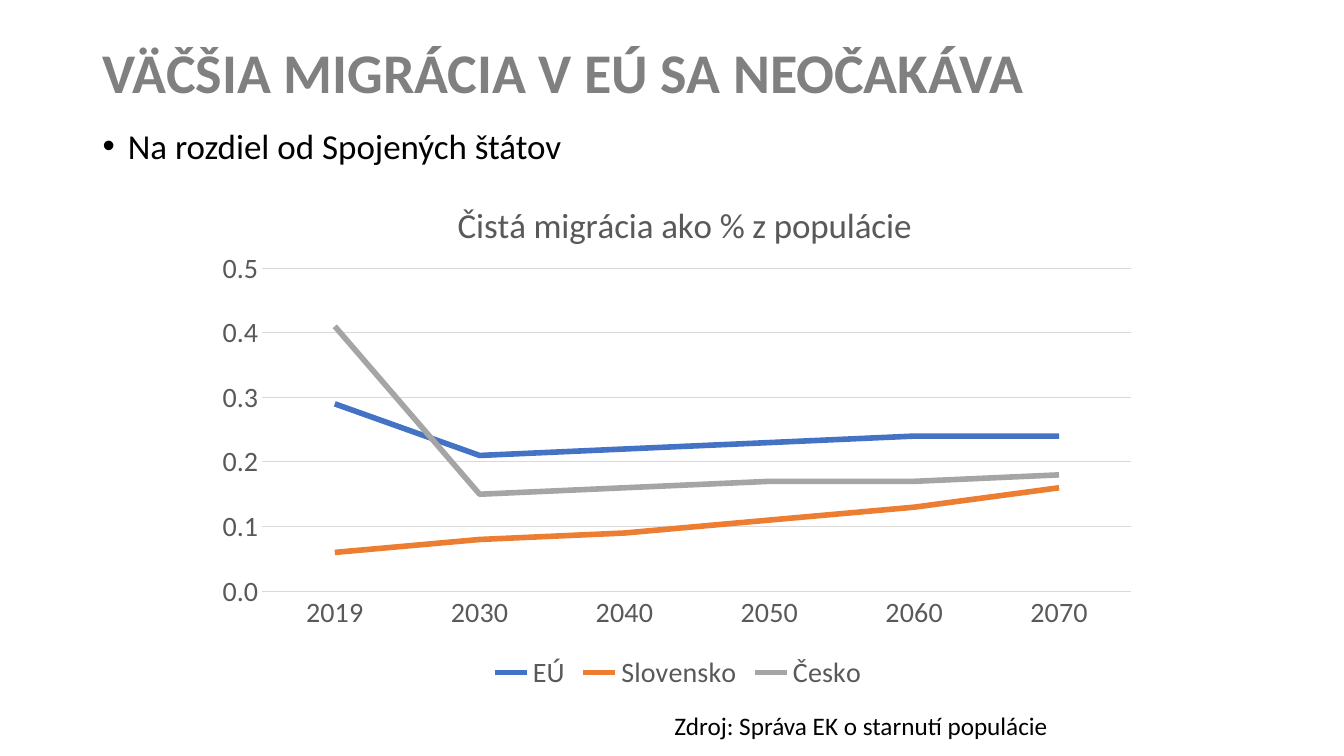
from dataclasses import dataclass

from lxml.etree import SubElement
from pptx import Presentation
from pptx.chart.data import CategoryChartData
from pptx.dml.color import RGBColor
from pptx.enum.chart import XL_CHART_TYPE, XL_LEGEND_POSITION, XL_TICK_MARK
from pptx.enum.text import MSO_ANCHOR, PP_ALIGN
from pptx.oxml.ns import qn
from pptx.util import Inches, Pt


@dataclass(frozen=True)
class Theme:
    face: str = "Calibri"
    heading: str = "808080"
    ink: str = "000000"
    label: str = "595959"
    rule: str = "D9D9D9"
    heading_size: int = 40
    body_size: int = 25
    label_size: int = 20
    source_size: int = 18
    rule_width: float = 0.75
    series_width: int = 4


THEME = Theme()
YEARS = ("2019", "2030", "2040", "2050", "2060", "2070")
# Region: (line colour, net migration as a share of population)
MIGRATION = {
    "EÚ": ("4472C4", (0.29, 0.21, 0.22, 0.23, 0.24, 0.24)),
    "Slovensko": ("ED7D31", (0.06, 0.08, 0.09, 0.11, 0.13, 0.16)),
    "Česko": ("A5A5A5", (0.41, 0.15, 0.16, 0.17, 0.17, 0.18)),
}


def style_font(font, size, color, bold=False):
    font.name = THEME.face
    font.size = Pt(size)
    font.bold = bold
    font.color.rgb = RGBColor.from_string(color)


def style_line(line, color, width):
    line.color.rgb = RGBColor.from_string(color)
    line.width = Pt(width)


def set_heading(slide, text):
    heading = slide.shapes.title
    heading.left, heading.top = Inches(0.92), Inches(0.17)
    heading.width, heading.height = Inches(11.5), Inches(1.16)
    frame = heading.text_frame
    frame.text = text
    frame.vertical_anchor = MSO_ANCHOR.MIDDLE
    paragraph = frame.paragraphs[0]
    paragraph.alignment = PP_ALIGN.LEFT
    paragraph.line_spacing = 0.9
    style_font(paragraph.runs[0].font, THEME.heading_size, THEME.heading, True)


def add_text(slide, text, box, size, bullet=False):
    frame = slide.shapes.add_textbox(*map(Inches, box)).text_frame
    frame.word_wrap = bullet
    frame.text = text
    paragraph = frame.paragraphs[0]
    if bullet:
        properties = paragraph._p.get_or_add_pPr()
        properties.set("marL", str(Inches(0.25)))
        properties.set("indent", str(Inches(-0.25)))
        SubElement(properties, qn("a:buFont"), typeface="Arial")
        SubElement(properties, qn("a:buChar"), char="•")
        paragraph.line_spacing = 0.9
    style_font(paragraph.runs[0].font, size, THEME.ink)


def place_part(part, index, **fractions):
    """Place a chart part by fractions of the chart's size."""
    for automatic in part.findall(qn("c:layout")):
        part.remove(automatic)
    layout = SubElement(part, qn("c:layout"))
    part.insert(index, layout)
    manual = SubElement(layout, qn("c:manualLayout"))
    if "w" in fractions:
        SubElement(manual, qn("c:layoutTarget"), val="inner")
    for side in ("x", "y"):
        SubElement(manual, qn(f"c:{side}Mode"), val="edge")
    for side, fraction in fractions.items():
        SubElement(manual, qn(f"c:{side}"), val=str(fraction))


def style_axes(chart):
    for axis in (chart.category_axis, chart.value_axis):
        axis.major_tick_mark = axis.minor_tick_mark = XL_TICK_MARK.NONE
        style_font(axis.tick_labels.font, THEME.label_size, THEME.label)
    years, shares = chart.category_axis, chart.value_axis
    style_line(years.format.line, THEME.rule, THEME.rule_width)
    shares.format.line.fill.background()
    shares.minimum_scale, shares.maximum_scale, shares.major_unit = 0, 0.5, 0.1
    shares.tick_labels.number_format = "0.0"
    shares.tick_labels.number_format_is_linked = False
    style_line(shares.major_gridlines.format.line, THEME.rule, THEME.rule_width)


def add_migration_chart(slide, title, box):
    migration = CategoryChartData()
    migration.categories = YEARS
    for region, (_, shares) in MIGRATION.items():
        migration.add_series(region, shares)
    chart = slide.shapes.add_chart(
        XL_CHART_TYPE.LINE, *map(Inches, box), migration).chart
    style_font(chart.font, THEME.label_size, THEME.label)

    # Title and legend
    chart.has_title = True
    caption = chart.chart_title.text_frame
    caption.text = title
    style_font(caption.paragraphs[0].runs[0].font, THEME.body_size, THEME.label)
    chart.chart_title.include_in_layout = False
    chart.has_legend = True
    chart.legend.position = XL_LEGEND_POSITION.BOTTOM
    chart.legend.include_in_layout = False
    style_font(chart.legend.font, THEME.label_size, THEME.label)

    # Axes and lines
    style_axes(chart)
    plot = chart.plots[0]
    plot.vary_by_categories = False
    for region, (color, _) in zip(plot.series, MIGRATION.values()):
        region.smooth = False
        style_line(region.format.line, color, THEME.series_width)

    # Positions inside the chart
    place_part(chart.element.find(".//" + qn("c:title")), 1, x=0.26, y=0.04)
    place_part(chart.element.find(".//" + qn("c:plotArea")), 0,
               x=0.06, y=0.18, w=0.92, h=0.62)


def main():
    deck = Presentation()
    deck.slide_width, deck.slide_height = Inches(13.33), Inches(7.5)
    slide = deck.slides.add_slide(deck.slide_layouts.get_by_name("Title Only"))
    set_heading(slide, "VÄČŠIA MIGRÁCIA V EÚ SA NEOČAKÁVA")
    add_text(slide, "Na rozdiel od Spojených štátov", (0.92, 1.23, 11.5, 5.05),
             THEME.body_size, bullet=True)
    add_migration_chart(slide, "Čistá migrácia ako % z populácie",
                        (2.04, 1.73, 9.37, 5.17))
    add_text(slide, "Zdroj: Správa EK o starnutí populácie",
             (6.59, 7, 3.95, 0.4), THEME.source_size)
    deck.save("out.pptx")


if __name__ == "__main__":
    main()
